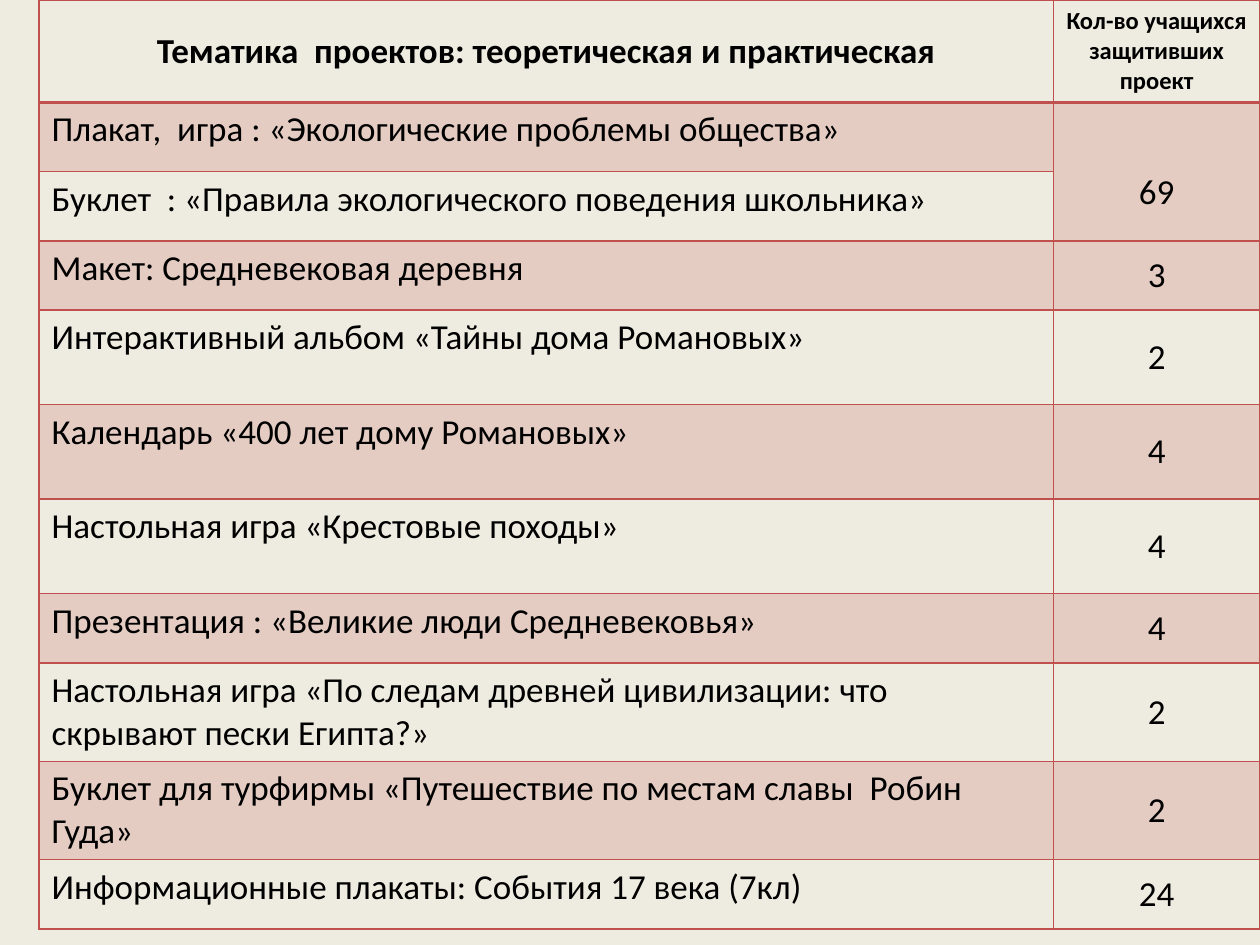
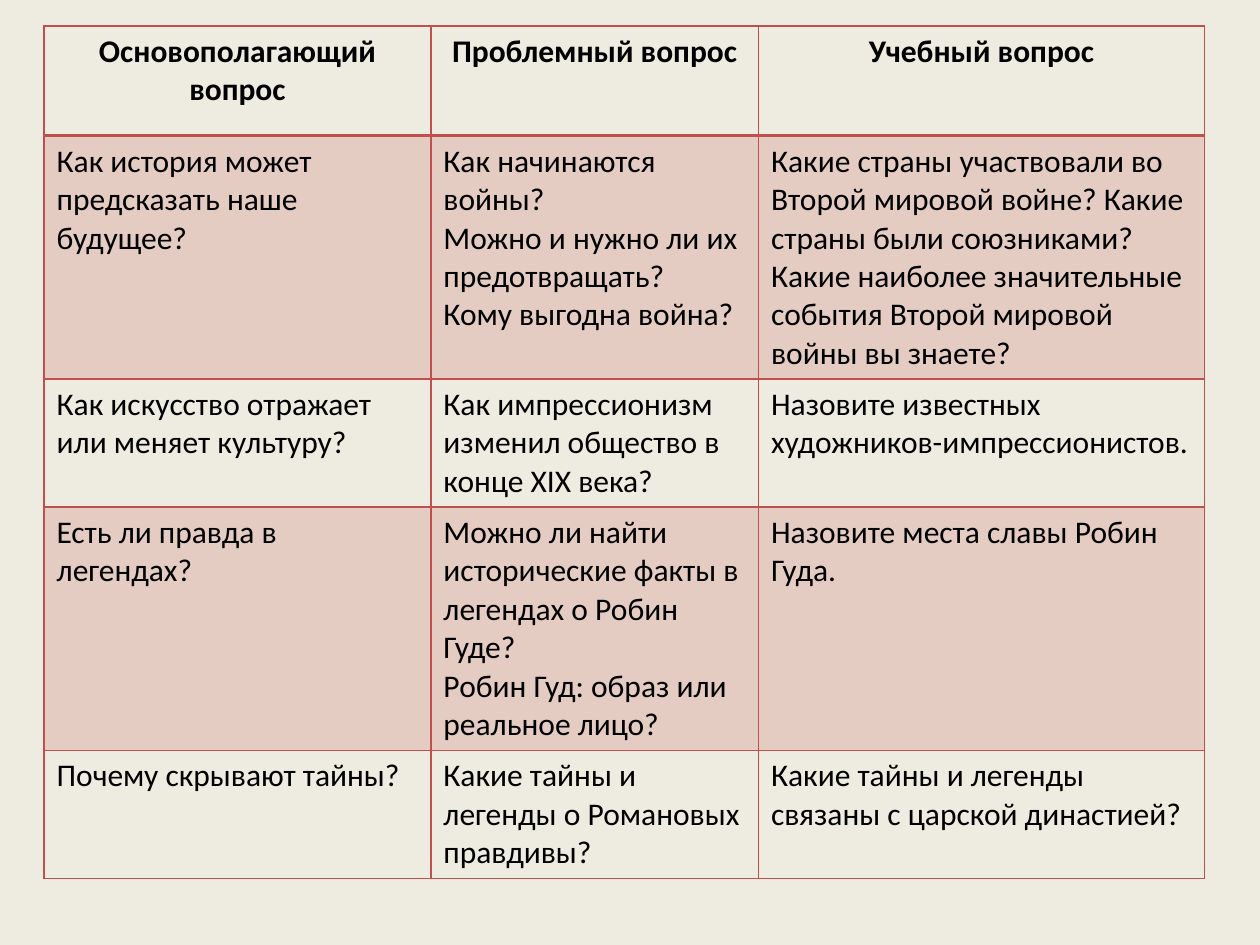
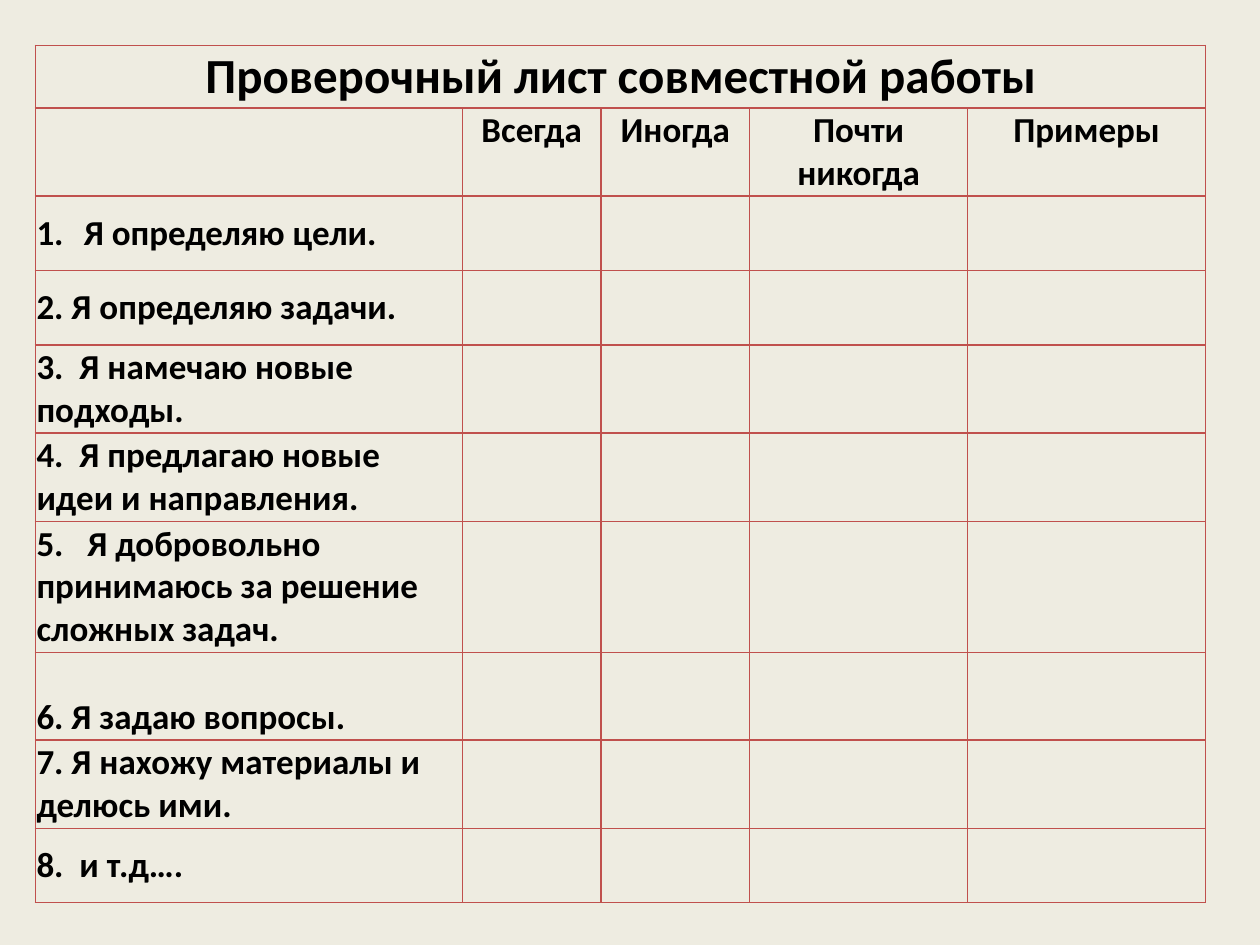
from lxml.etree import SubElement
from pptx import Presentation
from pptx.dml.color import RGBColor
from pptx.enum.text import MSO_ANCHOR, PP_ALIGN
from pptx.oxml.ns import qn
from pptx.util import Pt

RED = RGBColor(0xC0, 0x50, 0x4D)
CREAM = RGBColor(0xEE, 0xEC, 0xE1)
BLACK = RGBColor(0, 0, 0)
FONT = "Calibri"
BAND_ALPHA = 20
THIN, THICK = 1, 2
TIGHT_MARGIN = Pt(0.72)

PROJECTS = [
    ("Тематика  проектов: теоретическая и практическая", "Кол-во учащихся\nзащитивших проект"),
    ("Плакат,  игра : «Экологические проблемы общества»", "69"),
    ("Буклет  : «Правила экологического поведения школьника»", ""),
    ("Макет: Средневековая деревня", "3"),
    ("Интерактивный альбом «Тайны дома Романовых»", "2"),
    ("Календарь «400 лет дому Романовых»", "4"),
    ("Настольная игра «Крестовые походы»", "4"),
    ("Презентация : «Великие люди Средневековья»", "4"),
    ("Настольная игра «По следам древней цивилизации: что скрывают пески Египта?»", "2"),
    ("Буклет для турфирмы «Путешествие по местам славы  Робин Гуда»", "2"),
    ("Информационные плакаты: События 17 века (7кл)", "24"),
]

QUESTIONS = [
    ("Основополагающий вопрос", "Проблемный вопрос", "Учебный вопрос"),
    (
        "Как история может\nпредсказать наше будущее?",
        "Как начинаются войны?\nМожно и нужно ли их\nпредотвращать?\nКому выгодна война?",
        "Какие страны участвовали во\nВторой мировой войне? Какие\nстраны были союзниками?\n"
        "Какие наиболее значительные\nсобытия Второй мировой\nвойны вы знаете?",
    ),
    (
        "Как искусство отражает или меняет культуру?",
        "Как импрессионизм изменил общество в конце XIX века?",
        "Назовите известных\nхудожников-импрессионистов.",
    ),
    (
        "Есть ли правда в легендах?",
        "Можно ли найти исторические факты в легендах о Робин Гуде?\n"
        "Робин Гуд: образ или реальное лицо?",
        "Назовите места славы Робин Гуда.",
    ),
    (
        "Почему скрывают тайны?",
        "Какие тайны и легенды о Романовых правдивы?",
        "Какие тайны и легенды связаны с царской династией?",
    ),
]

CHECKLIST_TITLE = "Проверочный лист совместной работы"
FREQUENCIES = ("", "Всегда", "Иногда", "Почти никогда", "Примеры")
STATEMENTS = [
    "Я определяю цели.",
    "2. Я определяю задачи.",
    "3.  Я намечаю новые подходы.",
    "4.  Я предлагаю новые идеи и направления.",
    "5.   Я добровольно принимаюсь за решение сложных задач.",
    "6. Я задаю вопросы.",
    "7. Я нахожу материалы и делюсь ими.",
    "8.  и т.д….",
]


def set_borders(cell, top=THIN, bottom=THIN):
    properties = cell._tc.get_or_add_tcPr()
    for side, width in (("lnL", THIN), ("lnR", THIN), ("lnT", top), ("lnB", bottom)):
        line = SubElement(properties, qn(f"a:{side}"), w=str(Pt(width)))
        paint = SubElement(line, qn("a:solidFill"))
        SubElement(paint, qn("a:srgbClr"), val=str(RED))


def set_band(cell):
    cell.fill.solid()
    cell.fill.fore_color.rgb = RED
    color = cell._tc.tcPr.find(qn("a:solidFill")).find(qn("a:srgbClr"))
    SubElement(color, qn("a:alpha"), val=str(BAND_ALPHA * 1000))


def set_text(cell, text, size, bold=False, align=PP_ALIGN.LEFT, anchor=MSO_ANCHOR.TOP):
    cell.text = text
    cell.vertical_anchor = anchor
    for paragraph in cell.text_frame.paragraphs:
        paragraph.alignment = align
        paragraph.font.name = FONT
        paragraph.font.size = Pt(size)
        paragraph.font.bold = bold
        paragraph.font.color.rgb = BLACK


def tighten(cell):
    cell.margin_left = cell.margin_right = TIGHT_MARGIN
    cell.margin_top = cell.margin_bottom = TIGHT_MARGIN


def number_paragraph(paragraph, indent):
    properties = paragraph._p.get_or_add_pPr()
    properties.set("marL", str(Pt(indent)))
    properties.set("indent", str(-Pt(indent)))
    numbering = properties.makeelement(qn("a:buAutoNum"), {"type": "arabicPeriod"})
    properties.insert(0, numbering)


def add_grid(prs, left, top, widths, heights, header_rule=THIN, banded=False):
    slide = prs.slides.add_slide(prs.slide_layouts[6])
    grid = slide.shapes.add_table(
        len(heights), len(widths), Pt(left), Pt(top), Pt(sum(widths)), Pt(sum(heights))
    ).table
    grid.first_row = grid.horz_banding = False
    for column, width in zip(grid.columns, widths):
        column.width = Pt(width)
    for index, (row, height) in enumerate(zip(grid.rows, heights)):
        row.height = Pt(height)
        for cell in row.cells:
            set_borders(
                cell,
                top=header_rule if index == 1 else THIN,
                bottom=header_rule if index == 0 else THIN,
            )
            if banded and index % 2:
                set_band(cell)
            else:
                cell.fill.background()
    return grid


def add_projects(prs):
    heights = [58.4, 39.6, 39.6, 39.6, 54, 54, 54, 39.6, 56, 56, 39.6]
    grid = add_grid(prs, 22.32, 0, [579.6, 118.08], heights, THICK, banded=True)
    for index, (theme, count) in enumerate(PROJECTS):
        header = index == 0
        set_text(
            grid.cell(index, 0), theme, 20, header,
            PP_ALIGN.CENTER if header else PP_ALIGN.LEFT,
            MSO_ANCHOR.MIDDLE if header else MSO_ANCHOR.TOP,
        )
        set_text(
            grid.cell(index, 1), count, 14 if header else 20, header,
            PP_ALIGN.CENTER, MSO_ANCHOR.MIDDLE,
        )
    shared_count = grid.cell(1, 1)
    shared_count.merge(grid.cell(2, 1))
    shared_count.margin_top = Pt(28)


def add_questions(prs):
    heights = [62.64, 139, 73, 139, 73]
    grid = add_grid(prs, 25.2, 15, [221.04, 187.2, 254.88], heights, THICK, banded=True)
    for index, questions in enumerate(QUESTIONS):
        header = index == 0
        align = PP_ALIGN.CENTER if header else PP_ALIGN.LEFT
        for column, question in enumerate(questions):
            set_text(grid.cell(index, column), question, 18, header, align)


def add_checklist(prs):
    heights = [35, 50, 42.5, 42.5, 50, 50, 75, 50, 50, 42.5]
    grid = add_grid(prs, 20.16, 26, [244.08, 79.2, 84.96, 124.56, 136.08], heights)
    title = grid.cell(0, 0)
    title.merge(grid.cell(0, 4))
    set_text(title, CHECKLIST_TITLE, 28, True, PP_ALIGN.CENTER, MSO_ANCHOR.MIDDLE)
    tighten(title)
    for column, frequency in enumerate(FREQUENCIES):
        heading = grid.cell(1, column)
        set_text(heading, frequency, 20, True, PP_ALIGN.CENTER)
        tighten(heading)
    for index, statement in enumerate(STATEMENTS, start=2):
        set_text(grid.cell(index, 0), statement, 20, True, anchor=MSO_ANCHOR.MIDDLE)
        tighten(grid.cell(index, 0))
    number_paragraph(grid.cell(2, 0).text_frame.paragraphs[0], 27)
    grid.cell(7, 0).vertical_anchor = MSO_ANCHOR.BOTTOM


def main():
    prs = Presentation()
    prs.slide_width, prs.slide_height = Pt(720), Pt(540)
    background = prs.slide_master.background.fill
    background.solid()
    background.fore_color.rgb = CREAM
    add_projects(prs)
    add_questions(prs)
    add_checklist(prs)
    prs.save("out.pptx")


if __name__ == "__main__":
    main()
